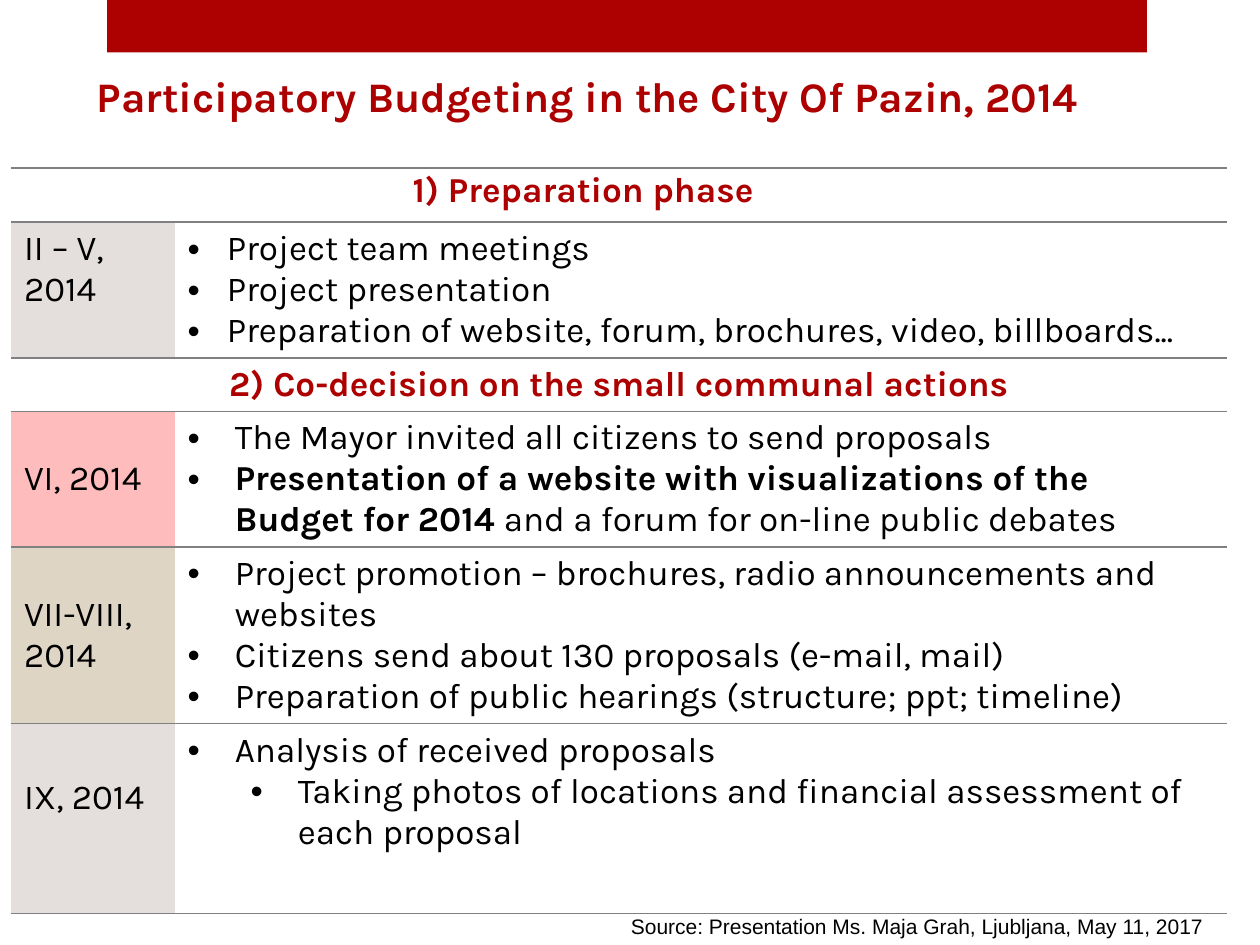
import pptx
import pptx.util
import pptx.dml.color
import pptx.enum.shapes
import pptx.enum.text
import pptx.oxml
import pptx.oxml.ns
from pptx.util import Cm

COLORS = {
    "red": "AD0101", "black": "000000", "white": "FFFFFF", "border": "808080",
    "grey": "E4DFDC", "pink": "FFBCBC", "sand": "DED5C5",
}
MIDDLE = pptx.enum.text.MSO_ANCHOR.MIDDLE
TOP = pptx.enum.text.MSO_ANCHOR.TOP
CENTER = pptx.enum.text.PP_ALIGN.CENTER

BODY = {"name": "Karla", "size": 20, "bold": False, "color": "black"}
STRONG = {**BODY, "bold": True}
HEADING = {**STRONG, "color": "red"}
TITLE = {**HEADING, "size": 24}
SOURCE = {**BODY, "name": "Arial", "size": 12}

TEXT_BOXES = [
    ("1) Preparation phase", HEADING, (8.07, 3.25, 10, 1.12)),
    ("Source: Presentation Ms. Maja Grah, Ljubljana, May 11, 2017", SOURCE, (12.47, 18.29, 12.45, 0.76)),
    ("Participatory Budgeting in the City Of Pazin, 2014", TITLE, (1.7, 1.3, 23.4, 1.27)),
]

TABLE_LEFT, TABLE_TOP = 0.23, 3.39
COLUMN_WIDTHS = (3.3, 21.2)
ROWS = [
    {"height": 1.09, "heading": ""},
    {"height": 2.73, "period": "II – V, 2014", "fill": "grey", "anchor": TOP, "indent": 0.79, "items": [
        (0, [("Project team meetings", BODY)]),
        (0, [("Project presentation", BODY)]),
        (0, [("Preparation of website, forum, brochures, video, billboards...", BODY)]),
    ]},
    {"height": 1.08, "heading": "2) Co-decision on the small communal actions"},
    {"height": 2.73, "period": "VI, 2014", "fill": "pink", "items": [
        (0, [("The Mayor invited all citizens to send proposals", BODY)]),
        (0, [("Presentation of a website with visualizations of the Budget for 2014 ", STRONG),
             ("and a forum for on-line public debates", BODY)]),
    ]},
    {"height": 3.56, "period": "VII-VIII, 2014", "fill": "sand", "items": [
        (0, [("Project promotion – brochures, radio announcements and websites", BODY)]),
        (0, [("Citizens send about 130 proposals (e-mail, mail)", BODY)]),
        (0, [("Preparation of public hearings (structure; ppt; timeline)", BODY)]),
    ]},
    {"height": 3.83, "period": "IX, 2014", "fill": "grey", "bottom": 0.95, "items": [
        (0, [("Analysis of received proposals", BODY)]),
        (1, [("Taking photos of locations and financial assessment of each proposal", BODY)]),
    ]},
]
NO_STYLE = "{2D5ABB26-0587-4C30-8999-92F81FD0307C}"


def rgb(name):
    return pptx.dml.color.RGBColor.from_string(COLORS[name])


def add_run(paragraph, text, style):
    run = paragraph.add_run()
    run.text = text
    values = {**style, "size": pptx.util.Pt(style["size"])}
    run.font.color.rgb = rgb(values.pop("color"))
    for attribute, value in values.items():
        setattr(run.font, attribute, value)


def add_bullet(paragraph, level, indent):
    paragraph.level = level
    properties = paragraph._p.get_or_add_pPr()
    properties.set("marL", str(Cm(indent + 1.27 * level)))
    properties.set("indent", str(-Cm(indent)))
    namespace = pptx.oxml.ns.nsdecls("a")
    for tag in ('buFont typeface="Arial"', 'buChar char="•"'):
        properties.append(pptx.oxml.parse_xml(f"<a:{tag} {namespace}/>"))


def format_cell(cell, fill):
    cell.fill.solid()
    cell.fill.fore_color.rgb = rgb(fill)
    for position, tag in enumerate(("lnT", "lnB")):
        border = pptx.oxml.parse_xml(
            f'<a:{tag} {pptx.oxml.ns.nsdecls("a")} w="12700"><a:solidFill>'
            f'<a:srgbClr val="{COLORS["border"]}"/></a:solidFill></a:{tag}>')
        cell._tc.get_or_add_tcPr().insert(position, border)


def fill_row(table, index, row):
    period, details = table.cell(index, 0), table.cell(index, 1)
    format_cell(period, row.get("fill", "white"))
    format_cell(details, "white")
    paragraph = period.text_frame.paragraphs[0]
    if "heading" in row:
        period.merge(details)
        if row["heading"]:
            paragraph.alignment = CENTER
            add_run(paragraph, row["heading"], HEADING)
        return
    add_run(paragraph, row["period"], BODY)
    period.vertical_anchor = row.get("anchor", MIDDLE)
    period.margin_bottom = Cm(row.get("bottom", 0.13))
    frame = details.text_frame
    for number, (level, runs) in enumerate(row["items"]):
        paragraph = frame.add_paragraph() if number else frame.paragraphs[0]
        add_bullet(paragraph, level, row.get("indent", 0.95))
        for text, style in runs:
            add_run(paragraph, text, style)


def add_schedule(slide):
    heights = [row["height"] for row in ROWS]
    frame = slide.shapes.add_table(
        len(ROWS), len(COLUMN_WIDTHS), Cm(TABLE_LEFT), Cm(TABLE_TOP),
        Cm(sum(COLUMN_WIDTHS)), Cm(sum(heights)))
    table = frame.table
    table.first_row = table.horz_banding = False
    table._tbl.tblPr.find(pptx.oxml.ns.qn("a:tableStyleId")).text = NO_STYLE
    for column, width in zip(table.columns, COLUMN_WIDTHS):
        column.width = Cm(width)
    for index, row in enumerate(ROWS):
        table.rows[index].height = Cm(row["height"])
        fill_row(table, index, row)


def main():
    presentation = pptx.Presentation()
    presentation.slide_width, presentation.slide_height = Cm(25.4), Cm(19.05)
    slide = presentation.slides.add_slide(presentation.slide_layouts[6])

    banner = slide.shapes.add_shape(
        pptx.enum.shapes.MSO_SHAPE.RECTANGLE, Cm(2.16), Cm(0), Cm(20.96), Cm(1.06))
    banner.shadow.inherit = False
    banner.fill.solid()
    banner.fill.fore_color.rgb = rgb("red")
    banner.line.fill.background()

    add_schedule(slide)
    for text, style, place in TEXT_BOXES:
        frame = slide.shapes.add_textbox(*map(Cm, place)).text_frame
        frame.word_wrap = True
        add_run(frame.paragraphs[0], text, style)
    presentation.save("out.pptx")


if __name__ == "__main__":
    main()
